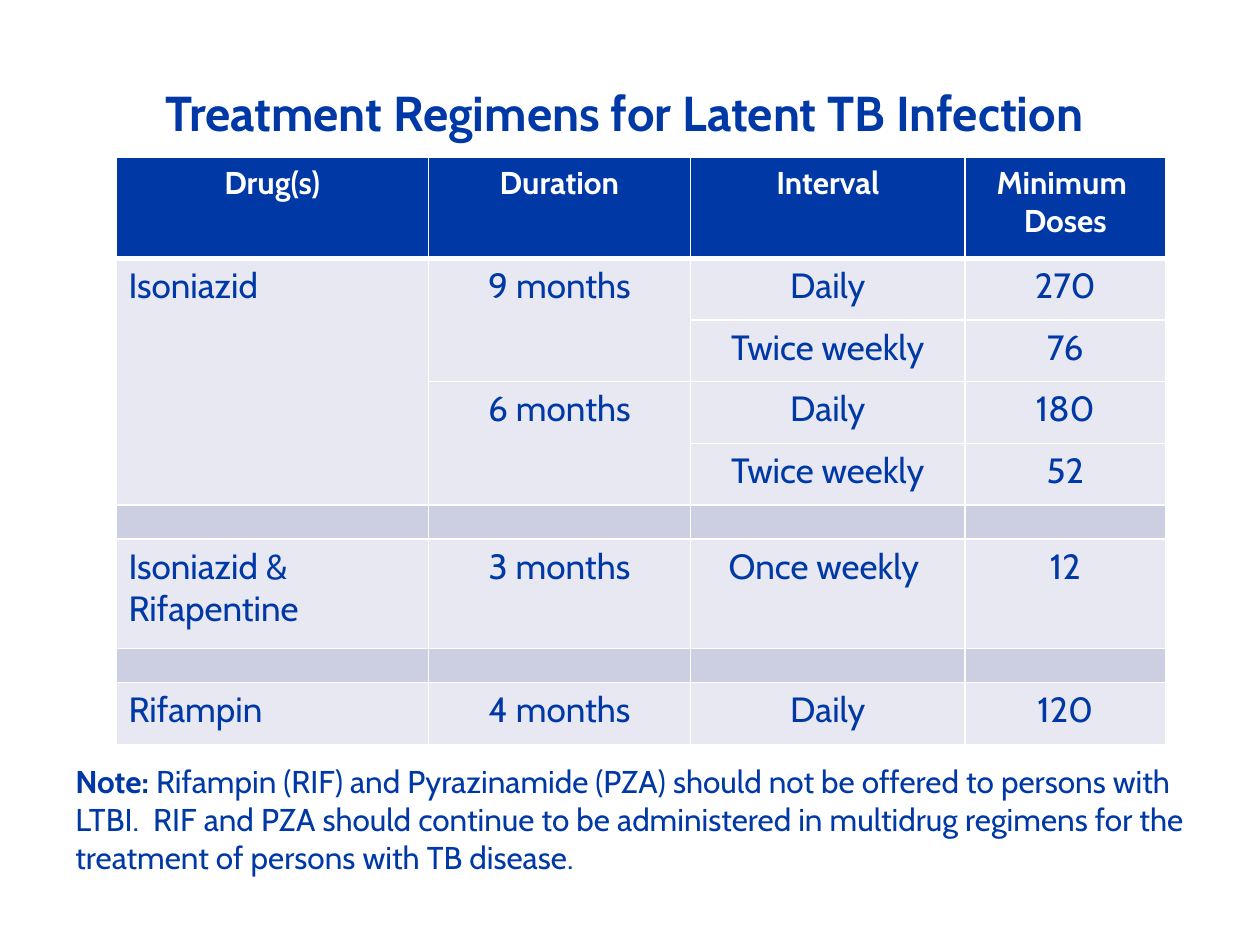
"""Build a slide with a table of treatment regimens for latent TB infection."""
from lxml.etree import SubElement
from pptx import Presentation
from pptx.dml.color import RGBColor
from pptx.enum.text import MSO_ANCHOR, MSO_AUTO_SIZE, PP_ALIGN
from pptx.oxml.ns import qn
from pptx.util import Inches, Pt

BLUE = RGBColor(0x00, 0x39, 0xA6)
WHITE = RGBColor(0xFF, 0xFF, 0xFF)
PALE = RGBColor(0xE7, 0xE8, 0xF1)
GREY = RGBColor(0xCC, 0xCE, 0xE1)
COLS = [2.48, 2.08, 2.18, 1.59]
LINE, GAP = 0.49, 0.27
ROWS = [0.8] + [LINE] * 4 + [GAP, 0.87, GAP, LINE]
DATA = [
    ["Drug(s)", "Duration", "Interval", "Minimum \vDoses"],
    ["Isoniazid", "9 months", "Daily", "270"],
    ["", "", "Twice weekly", "76"],
    ["", "6 months", "Daily", "180"],
    ["", "", "Twice weekly", "52"],
    [""] * 4,
    ["Isoniazid & Rifapentine", "3 months", "Once weekly ", "12"],
    [""] * 4,
    ["Rifampin", "4 months", "Daily", "120"],
]
SPANS = [(1, 0, 4), (1, 1, 2), (3, 1, 2)]


def write(para, text, size, color=BLUE, bold=False):
    for i, part in enumerate(text.split("\v")):
        if i:
            para.add_line_break()
        run = para.add_run()
        run.text = part
        run.font.name = "Cabin"
        run.font.size = Pt(size)
        run.font.bold = bold
        run.font.color.rgb = color


def edge(cell, side, width):
    props = cell._tc.get_or_add_tcPr()
    line = SubElement(props, qn("a:ln" + side), w=str(Pt(width)))
    fill = SubElement(line, qn("a:solidFill"))
    SubElement(fill, qn("a:srgbClr"), val=str(WHITE))


prs = Presentation()
prs.slide_width, prs.slide_height = Inches(10), Inches(7.5)
wide, high = prs.slide_width, prs.slide_height
slide = prs.slides.add_slide(prs.slide_layouts[5])

title = slide.shapes.title
title.left, title.top = int(wide * 0.05), int(high * 0.04)
title.width, title.height = int(wide * 0.9), Inches(0.87)
frame = title.text_frame
frame.auto_size = MSO_AUTO_SIZE.NONE
frame.vertical_anchor = MSO_ANCHOR.BOTTOM
para = frame.paragraphs[0]
para.alignment = PP_ALIGN.CENTER
para.line_spacing = Pt(30)
write(para, "Treatment Regimens for Latent TB Infection ", 28, bold=True)

table = slide.shapes.add_table(
    len(ROWS), len(COLS), Inches(0.92), Inches(1.25),
    Inches(sum(COLS)), Inches(sum(ROWS))).table
for col, size in zip(table.columns, COLS):
    col.width = Inches(size)
for row, size in zip(table.rows, ROWS):
    row.height = Inches(size)

for r, texts in enumerate(DATA):
    head = r == 0
    for c, text in enumerate(texts):
        cell = table.cell(r, c)
        for side in "LRTB":
            thick = (r, side) in [(0, "B"), (1, "T")]
            edge(cell, side, 3 if thick else 1)
        cell.fill.solid()
        cell.fill.fore_color.rgb = BLUE if head else GREY if ROWS[r] == GAP else PALE
        para = cell.text_frame.paragraphs[0]
        para.alignment = PP_ALIGN.CENTER if head or c else PP_ALIGN.LEFT
        if text:
            write(para, text, 18 if head else 20, WHITE if head else BLUE, head)
        else:
            SubElement(para._p, qn("a:endParaRPr"), sz="800")

for r, c, count in SPANS:
    table.cell(r, c).merge(table.cell(r + count - 1, c))

note = slide.shapes.add_textbox(
    int(wide * 0.05), int(high * 0.8), int(wide * 0.9), Inches(1))
frame = note.text_frame
frame.word_wrap = True
frame.vertical_anchor = MSO_ANCHOR.BOTTOM
para = frame.paragraphs[0]
write(para, "Note: ", 18, bold=True)
write(para, "Rifampin (RIF) and Pyrazinamide (PZA) should not be offered to "
      "persons with LTBI.  RIF and PZA should continue to be administered in "
      "multidrug regimens for the treatment of persons with TB disease.", 18)

prs.save("out.pptx")
